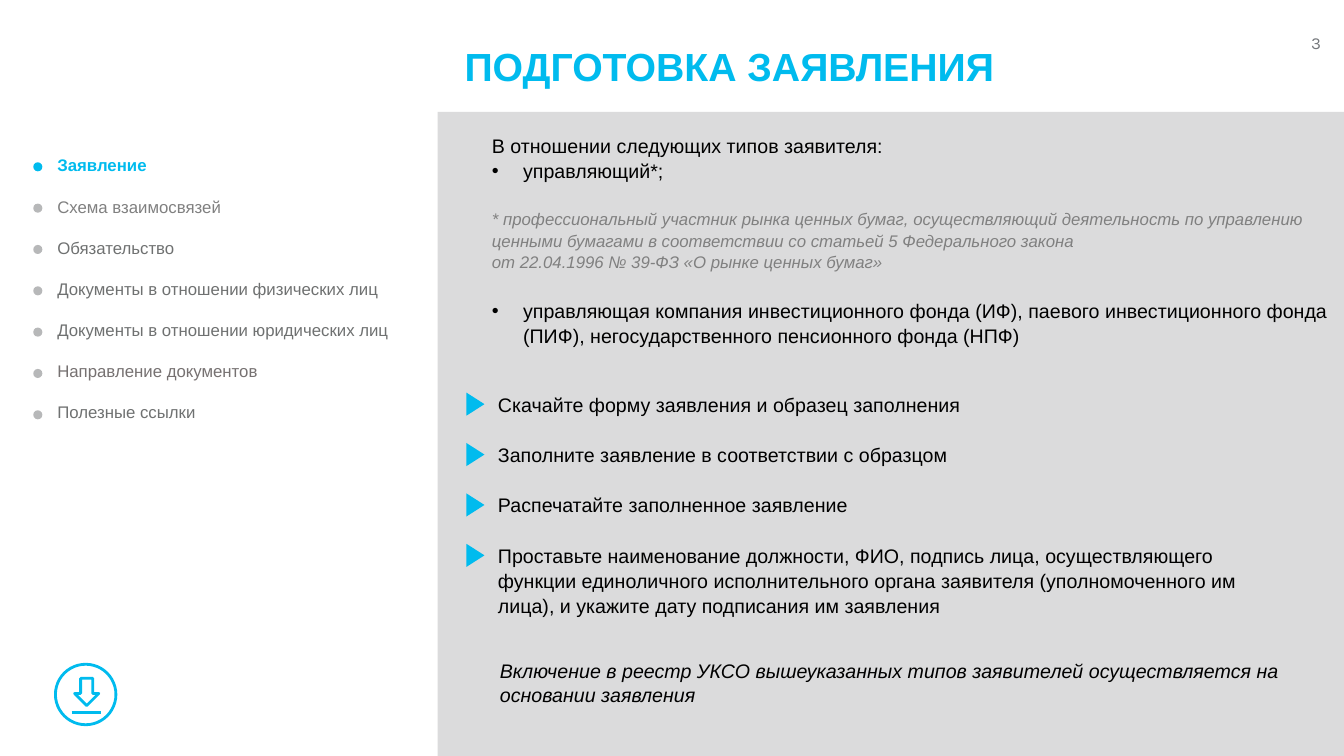
import copy
import pptx
import pptx.util
import pptx.dml.color
import pptx.enum.shapes
import pptx.enum.text
import pptx.oxml.ns
from lxml import etree

Inches = pptx.util.Inches
Pt = pptx.util.Pt
RGBColor = pptx.dml.color.RGBColor
Shapes = pptx.enum.shapes.MSO_SHAPE
Align = pptx.enum.text.PP_ALIGN
Anchor = pptx.enum.text.MSO_ANCHOR
qn = pptx.oxml.ns.qn

COLORS = {
    "accent": "00BBEE",
    "panel": "DBDBDC",
    "black": "000000",
    "note": "808080",
    "menu": "6F7171",
    "menu_alt": "767171",
    "dot": "B7B8B9",
    "number": "74777B",
}

presentation = pptx.Presentation()
presentation.slide_width = Inches(13.33)
presentation.slide_height = Inches(7.5)
slide = presentation.slides.add_slide(presentation.slide_layouts[6])


def add_figure(kind, left, top, width, height, fill=None, line=None):
    shape = slide.shapes.add_shape(
        kind, Inches(left), Inches(top), Inches(width), Inches(height))
    shape.shadow.inherit = False
    if fill:
        shape.fill.solid()
        shape.fill.fore_color.rgb = RGBColor.from_string(COLORS[fill])
    else:
        shape.fill.background()
    if line:
        shape.line.color.rgb = RGBColor.from_string(COLORS[line])
        shape.line.width = Pt(2)
    else:
        shape.line.fill.background()
    return shape


def add_text(left, top, width, height, items, anchor=Anchor.TOP):
    box = slide.shapes.add_textbox(
        Inches(left), Inches(top), Inches(width), Inches(height))
    frame = box.text_frame
    frame.word_wrap = True
    frame.vertical_anchor = anchor
    for index, (text, style) in enumerate(items):
        paragraph = frame.paragraphs[0] if index == 0 else frame.add_paragraph()
        paragraph.text = text
        for name, value in style.get("paragraph", {}).items():
            setattr(paragraph, name, value)
        properties = paragraph._p.get_or_add_pPr()
        if "indent" in style:
            margin, first = style["indent"]
            properties.set("marL", str(Inches(margin)))
            properties.set("indent", str(Inches(first)))
        if style.get("bullet"):
            etree.SubElement(properties, qn("a:buFont")).set("typeface", "Arial")
            etree.SubElement(properties, qn("a:buChar")).set("char", "•")
        for run in paragraph.runs:
            font_values = {"name": "Arial", "size": Pt(14), **style.get("font", {})}
            for name, value in font_values.items():
                setattr(run.font, name, value)
            color = COLORS[style.get("color", "black")]
            run.font.color.rgb = RGBColor.from_string(color)
        for line_break in paragraph._p.findall(qn("a:br")):
            line_break.insert(0, copy.deepcopy(paragraph.runs[0]._r.rPr))


add_figure(Shapes.RECTANGLE, 4.34, 1.11, 8.99, 6.39, fill="panel")

add_text(10.78, 0.28, 2.42, 0.3, [
    ("3", {"font": {"name": "Karla", "size": Pt(12)}, "color": "number",
           "paragraph": {"alignment": Align.RIGHT}}),
])
add_text(4.51, -0.04, 11.5, 1.45, [
    ("ПОДГОТОВКА ЗАЯВЛЕНИЯ", {"font": {"size": Pt(28), "bold": True}, "color": "accent",
                              "paragraph": {"line_spacing": 0.9}}),
], Anchor.MIDDLE)

body = {"line_spacing": 1.07}
spaced = {"line_spacing": 1.07, "space_before": Pt(18)}
add_text(4.28, 1.26, 8.99, 2.26, [
    ("В отношении следующих типов заявителя:", {"indent": (0.5, 0), "paragraph": body}),
    ("управляющий*;", {"indent": (0.81, -0.31), "bullet": True, "paragraph": body}),
    ("* профессиональный участник рынка ценных бумаг, осуществляющий деятельность "
     "по управлению ценными бумагами в соответствии со статьей 5 Федерального закона "
     "\vот 22.04.1996 № 39-ФЗ «О рынке ценных бумаг»",
     {"indent": (0.5, 0), "paragraph": spaced, "color": "note",
      "font": {"size": Pt(12), "italic": True}}),
    ("управляющая компания инвестиционного фонда (ИФ), паевого инвестиционного "
     "фонда (ПИФ), негосударственного пенсионного фонда (НПФ)",
     {"indent": (0.81, -0.31), "bullet": True, "paragraph": spaced}),
])

steps = [
    "Скачайте форму заявления и образец заполнения",
    "Заполните заявление в соответствии с образцом",
    "Распечатайте заполненное заявление",
    "Проставьте наименование должности, ФИО, подпись лица, осуществляющего функции "
    "единоличного исполнительного органа заявителя (уполномоченного им лица), "
    "и укажите дату подписания им заявления",
]
add_text(4.34, 3.83, 8.49, 2.37, [
    (step, {"indent": (0.5, 0), "paragraph": spaced if index else body})
    for index, step in enumerate(steps)
])
for index in range(len(steps)):
    marker = add_figure(Shapes.ISOSCELES_TRIANGLE, 4.6, 3.92 + 0.5 * index,
                        0.23, 0.18, fill="accent")
    marker.rotation = 90

menu = [
    ("Заявление", "accent"),
    ("Схема взаимосвязей", "note"),
    ("Обязательство", "menu"),
    ("Документы в отношении физических лиц", "menu"),
    ("Документы в отношении юридических лиц", "menu"),
    ("Направление документов", "menu_alt"),
    ("Полезные ссылки", "menu"),
]
add_text(0.47, 1.49, 3.69, 2.78, [
    (label, {"font": {"size": Pt(12), "bold": color == "accent"}, "color": color,
             "paragraph": {"space_after": Pt(15)}})
    for label, color in menu
])
for index in range(len(menu)):
    add_figure(Shapes.OVAL, 0.33, 1.61 + 0.41 * index, 0.09, 0.09,
               fill="dot" if index else "accent")

add_text(4.86, 6.49, 8.47, 0.57, [
    ("Включение в реестр УКСО вышеуказанных типов заявителей осуществляется "
     "на основании заявления", {"font": {"italic": True}}),
])

add_figure(Shapes.OVAL, 0.55, 6.59, 0.6, 0.6, line="accent")
add_figure(Shapes.DOWN_ARROW, 0.74, 6.73, 0.24, 0.27, line="accent")
download_line = slide.shapes.add_connector(
    pptx.enum.shapes.MSO_CONNECTOR.STRAIGHT,
    Inches(0.71), Inches(7.07), Inches(1), Inches(7.07))
download_line.line.color.rgb = RGBColor.from_string(COLORS["accent"])
download_line.line.width = Pt(2)
etree.SubElement(download_line._element.spPr, qn("a:effectLst"))

presentation.save("out.pptx")
